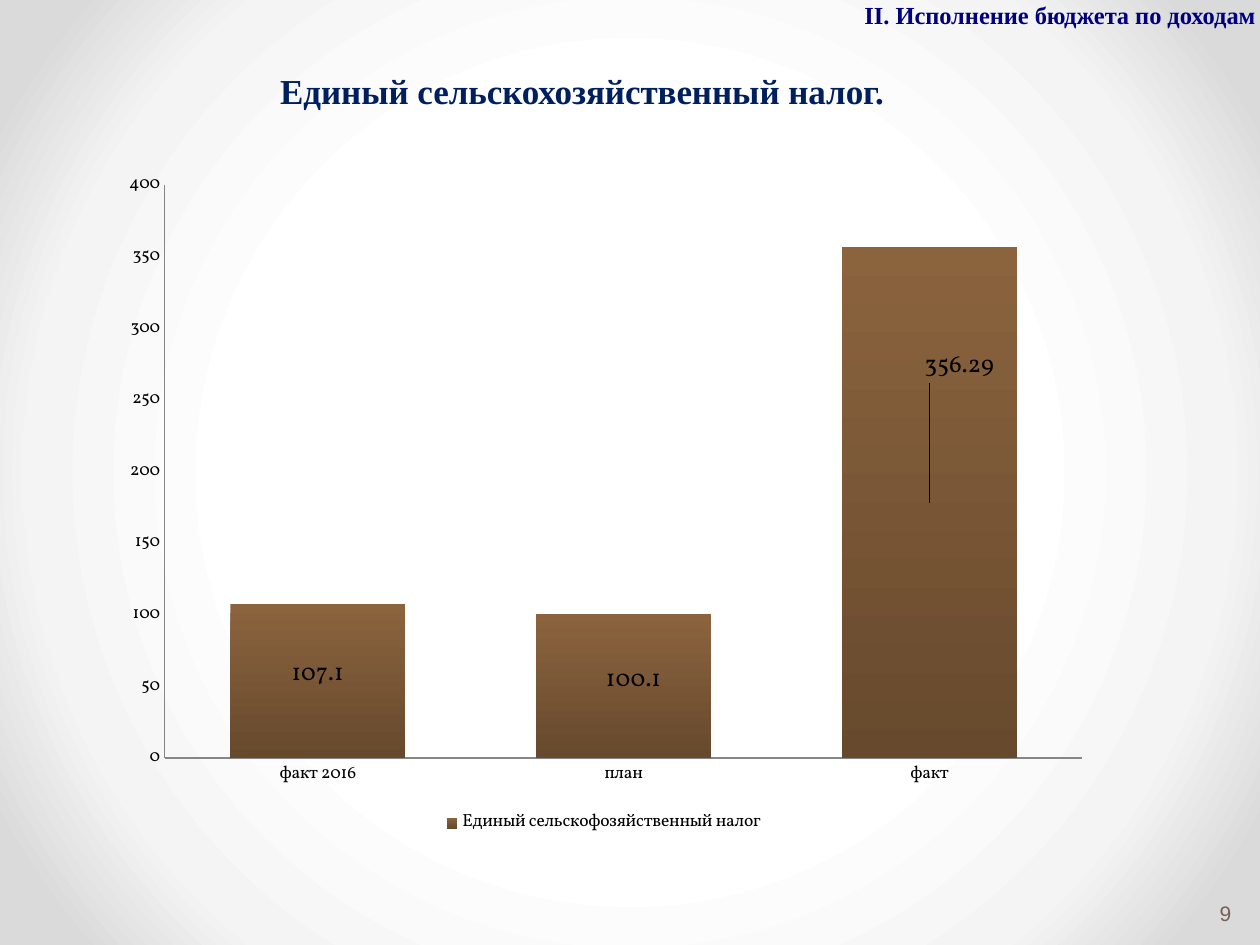
import dataclasses
import pptx
import pptx.chart.data
import pptx.dml.color
import pptx.enum.chart
import pptx.enum.text
import pptx.oxml
import pptx.oxml.ns
import pptx.util

Pt = pptx.util.Pt
Align = pptx.enum.text.PP_ALIGN
Place = pptx.enum.chart.XL_LABEL_POSITION
qn = pptx.oxml.ns.qn


@dataclasses.dataclass(frozen=True)
class Theme:
    serif: str = "Times New Roman"
    sans: str = "Arial"
    chart: str = "Vollkorn"
    title: str = "001F5F"
    head: str = "00007D"
    page: str = "775F54"
    ink: str = "000000"
    axis: str = "868686"
    bar_top: str = "8B643E"
    bar_low: str = "67492D"
    back: tuple = ((50, "FFFFFF"), (76, "F4F4F4"), (92, "DADADA"))
    title_size: int = 20
    head_size: int = 14
    page_size: int = 12
    chart_size: int = 10
    label_size: int = 14


THEME = Theme()


def rgb(code):
    return pptx.dml.color.RGBColor.from_string(code)


def style(font, name, size, color, bold=False):
    font.name, font.size, font.bold = name, Pt(size), bold
    font.color.rgb = rgb(color)


def add_back(slide):
    fill = slide.background.fill
    fill.gradient()
    grad = slide.background._cSld.find(".//" + qn("a:gradFill"))
    stops = "".join(
        f'<a:gs pos="{pos * 1000}"><a:srgbClr val="{color}"/></a:gs>'
        for pos, color in THEME.back)
    fresh = pptx.oxml.parse_xml(
        f'<a:gradFill {pptx.oxml.ns.nsdecls("a")} rotWithShape="1">'
        f'<a:gsLst>{stops}</a:gsLst><a:path path="circle">'
        '<a:fillToRect l="50000" t="50000" r="50000" b="50000"/>'
        '</a:path></a:gradFill>')
    grad.getparent().replace(grad, fresh)


def add_text(slide, box, words, look, align=Align.LEFT, bold=True):
    shape = slide.shapes.add_textbox(*map(Pt, box))
    frame = shape.text_frame
    frame.word_wrap = True
    frame.auto_size = pptx.enum.text.MSO_AUTO_SIZE.SHAPE_TO_FIT_TEXT
    frame.margin_left = frame.margin_right = frame.margin_bottom = 0
    frame.margin_top = Pt(1)
    para = frame.paragraphs[0]
    para.text, para.alignment, para.space_before = words, align, Pt(1)
    style(para.font, *look, bold)
    para.runs[0]._r.get_or_add_rPr().set("spc", "-5")
    return frame


def add_layout(parent, index, **parts):
    old = parent.find(qn("c:layout"))
    if old is not None:
        parent.remove(old)
    body = "".join(f'<c:{tag} val="{val}"/>' for tag, val in parts.items())
    parent.insert(index, pptx.oxml.parse_xml(
        f'<c:layout {pptx.oxml.ns.nsdecls("c")}>'
        f'<c:manualLayout>{body}</c:manualLayout></c:layout>'))


def drop_lines(labels):
    root = labels._element
    for old in root.findall(qn("c:showLeaderLines")):
        root.remove(old)
    root.append(pptx.oxml.parse_xml(
        f'<c:extLst {pptx.oxml.ns.nsdecls("c")}>'
        '<c:ext uri="{CE6537A1-D6FC-4f65-9D91-7224C49458BB}" '
        'xmlns:c15="http://schemas.microsoft.com/office/drawing/2012/chart">'
        '<c15:showLeaderLines val="0"/></c:ext></c:extLst>'))


def set_axis(axis):
    axis.has_major_gridlines = False
    axis.major_tick_mark = pptx.enum.chart.XL_TICK_MARK.NONE
    axis.format.line.color.rgb = rgb(THEME.axis)
    axis.format.line.width = Pt(0.75)


def set_bars(plot):
    plot.gap_width = 75
    plot.vary_by_categories = False
    bars = plot.series[0]
    fill = bars.format.fill
    fill.gradient()
    fill.gradient_angle = 270
    for stop, color in zip(fill.gradient_stops, (THEME.bar_top, THEME.bar_low)):
        stop.color.rgb = rgb(color)
    labels = bars.data_labels
    labels.show_value = True
    labels.position = Place.CENTER
    style(labels.font, THEME.chart, THEME.label_size, THEME.ink)
    for num, (x, y) in enumerate(((0, -0.01), (0.01, -0.01), (0.03, -0.2))):
        label = bars.points[num].data_label
        style(label.font, THEME.chart, THEME.label_size, THEME.ink)
        label.position = Place.CENTER
        add_layout(labels._element.findall(qn("c:dLbl"))[num], 1, x=x, y=y)
    drop_lines(labels)


def add_chart(slide, box):
    data = pptx.chart.data.CategoryChartData()
    data.categories = ["факт 2016", "план", "факт"]
    data.add_series("Единый сельскофозяйственный налог", (107.1, 100.1, 356.29))
    kind = pptx.enum.chart.XL_CHART_TYPE.COLUMN_CLUSTERED
    chart = slide.shapes.add_chart(kind, *map(Pt, box), data).chart
    style(chart.font, THEME.chart, THEME.chart_size, THEME.ink)
    chart.has_title = False
    chart.has_legend = True
    chart.legend.position = pptx.enum.chart.XL_LEGEND_POSITION.BOTTOM
    chart.legend.include_in_layout = False
    set_axis(chart.category_axis)
    set_axis(chart.value_axis)
    chart.value_axis.minimum_scale = 0
    chart.value_axis.maximum_scale = 400
    chart.value_axis.major_unit = 50
    set_bars(chart.plots[0])
    area = chart._chartSpace.find(".//" + qn("c:plotArea"))
    add_layout(area, 0, layoutTarget="inner", xMode="edge", yMode="edge",
               x=0.06, y=0.04, w=0.92, h=0.84)


def main():
    deck = pptx.Presentation()
    deck.slide_width, deck.slide_height = Pt(720), Pt(540)
    slide = deck.slides.add_slide(deck.slide_layouts[6])
    add_back(slide)
    add_text(slide, (697, 513.4, 9, 16.6), "9",
             (THEME.sans, THEME.page_size, THEME.page), bold=False)
    title = add_text(slide, (120, 39, 425, 25), "Единый сельскохозяйственный налог.",
                     (THEME.serif, THEME.title_size, THEME.title), Align.CENTER)
    title.vertical_anchor = pptx.enum.text.MSO_ANCHOR.BOTTOM
    add_text(slide, (494, -0.7, 228, 18.7), "II. Исполнение бюджета по доходам",
             (THEME.serif, THEME.head_size, THEME.head))
    add_chart(slide, (60, 90, 570, 390))
    deck.save("out.pptx")


if __name__ == "__main__":
    main()
